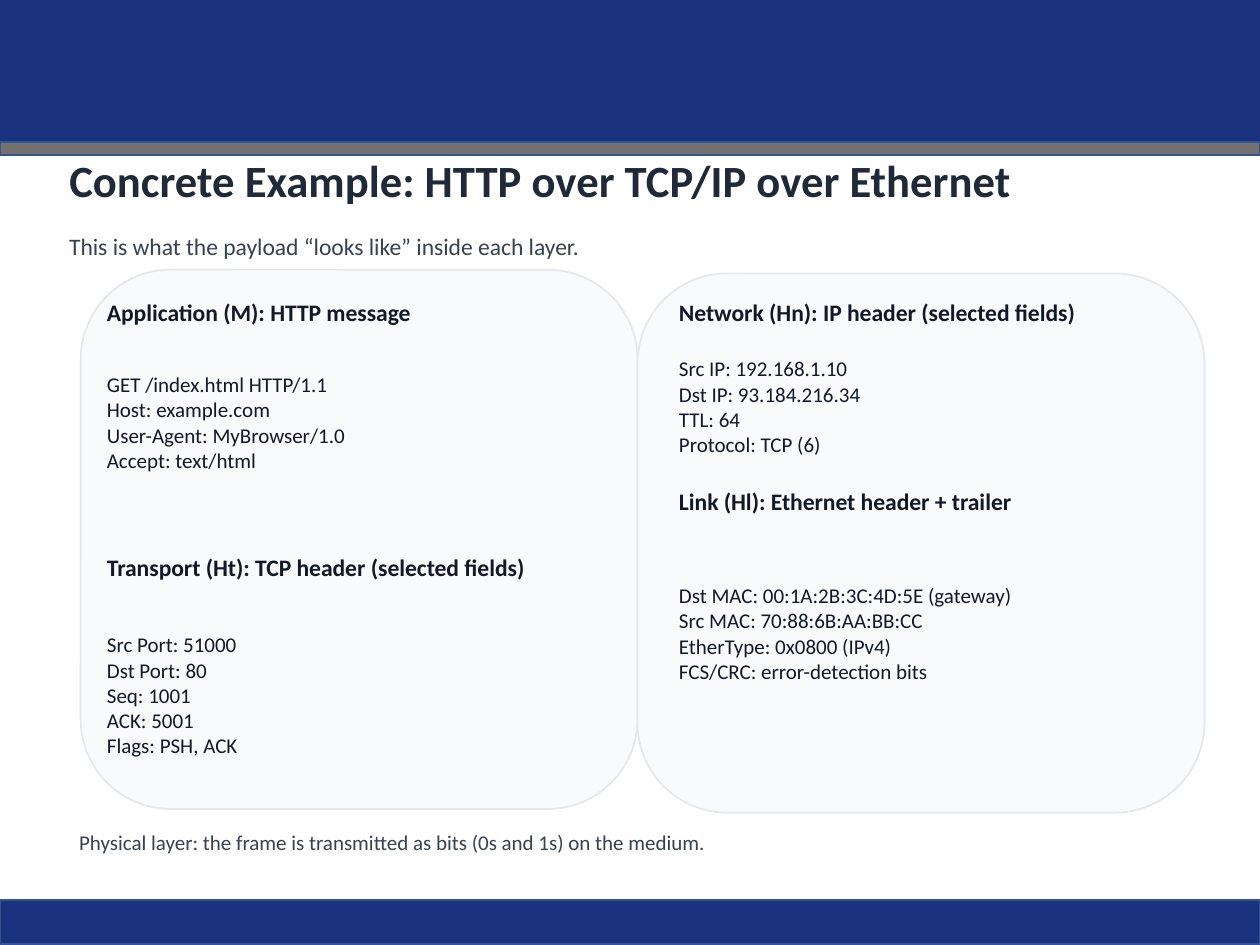
from pptx import Presentation
from pptx.dml.color import RGBColor
from pptx.enum.shapes import MSO_SHAPE
from pptx.enum.text import MSO_ANCHOR, MSO_AUTO_SIZE, PP_ALIGN
from pptx.util import Inches, Pt

NAVY = RGBColor(0x1B, 0x32, 0x7E)
NAVY_EDGE = RGBColor(0x32, 0x54, 0x91)
GREY = RGBColor(0x76, 0x71, 0x71)
CARD = RGBColor(0xF9, 0xFA, 0xFB)
CARD_EDGE = RGBColor(0xE5, 0xE7, 0xEB)
TITLE = RGBColor(0x1F, 0x29, 0x37)
INK = RGBColor(0x11, 0x18, 0x27)
SOFT = RGBColor(0x37, 0x41, 0x51)

# The slide is a grid of 100 columns by 75 rows; boxes are (col, row, cols, rows)
COLS, ROWS = 100, 75
CELL = Inches(10) / COLS


def emu(box):
    return [round(v * CELL) for v in box]


def add_panel(s, box, fill, edge=None, kind=MSO_SHAPE.RECTANGLE):
    sp = s.shapes.add_shape(kind, *emu(box))
    sp.shadow.inherit = False
    sp.fill.solid()
    sp.fill.fore_color.rgb = fill
    if edge is None:
        sp.line.fill.background()
    else:
        sp.line.color.rgb = edge
        sp.line.width = Pt(1)


def set_text(sp, lines, size, color, bold=False):
    tf = sp.text_frame
    tf.word_wrap = True
    tf.auto_size = MSO_AUTO_SIZE.NONE
    tf.vertical_anchor = MSO_ANCHOR.MIDDLE
    tf.text = "\n".join(lines)
    for p in tf.paragraphs:
        p.alignment = PP_ALIGN.LEFT
        p.font.name = "Calibri"
        p.font.size = Pt(size)
        p.font.bold = bold
        p.font.color.rgb = color


def add_text(s, box, lines, size, color, bold=False):
    set_text(s.shapes.add_textbox(*emu(box)), lines, size, color, bold)


def add_bands(s):
    add_panel(s, (0, 71.4, COLS, 3.5), NAVY, NAVY_EDGE)
    add_panel(s, (0, 0, COLS, 11.3), NAVY)
    add_panel(s, (0, 11.3, COLS, 1), GREY, NAVY_EDGE)


def add_heading(s, box, title, subtitle):
    x, y, w, h = box
    sp = s.shapes.title
    sp.left, sp.top, sp.width, sp.height = emu((x, y, w, h))
    set_text(sp, [title], 25.5, TITLE, bold=True)
    add_text(s, (x, y + 5.3, w, h), [subtitle], 13.5, SOFT)


def add_card(s, box, inset, text_width, sections):
    """Sections hold heading row, body row and body height, from the card's top."""
    x, y = box[:2]
    add_panel(s, box, CARD, CARD_EDGE, MSO_SHAPE.ROUNDED_RECTANGLE)
    for head_row, body_row, body_rows, heading, lines in sections:
        add_text(s, (x + inset, y + head_row, text_width, 3), [heading], 13.5, INK, bold=True)
        add_text(s, (x + inset, y + body_row, text_width, body_rows), lines, 12, INK)


HOST_SECTIONS = [
    (1.9, 5.6, 13, "Application (M): HTTP message",
     ["GET /index.html HTTP/1.1", "Host: example.com",
      "User-Agent: MyBrowser/1.0", "Accept: text/html"]),
    (22.1, 25.5, 16.5, "Transport (Ht): TCP header (selected fields)",
     ["Src Port: 51000", "Dst Port: 80", "Seq: 1001", "ACK: 5001", "Flags: PSH, ACK"]),
]
NETWORK_SECTIONS = [
    (1.6, 5.3, 10.5, "Network (Hn): IP header (selected fields)",
     ["Src IP: 192.168.1.10", "Dst IP: 93.184.216.34", "TTL: 64", "Protocol: TCP (6)"]),
    (16.6, 19.9, 17.3, "Link (Hl): Ethernet header + trailer",
     ["Dst MAC: 00:1A:2B:3C:4D:5E (gateway)", "Src MAC: 70:88:6B:AA:BB:CC",
      "EtherType: 0x0800 (IPv4)", "FCS/CRC: error-detection bits"]),
]


def main():
    prs = Presentation()
    prs.slide_width, prs.slide_height = emu((COLS, ROWS))
    s = prs.slides.add_slide(prs.slide_layouts[5])  # Title Only

    add_bands(s)
    add_heading(s, (4.5, 12, 90.7, 4.5),
                "Concrete Example: HTTP over TCP/IP over Ethernet",
                "This is what the payload “looks like” inside each layer.")
    # Layer cards
    add_card(s, (6.4, 21.4, 44.2, 42.8), 1.1, 39.8, HOST_SECTIONS)
    add_card(s, (50.6, 21.7, 45, 42.8), 2.3, 41.2, NETWORK_SECTIONS)
    # Footnote
    add_text(s, (5.3, 65.3, 90, 3),
             ["Physical layer: the frame is transmitted as bits (0s and 1s) on the medium."],
             12, SOFT)
    prs.save("out.pptx")


if __name__ == "__main__":
    main()
